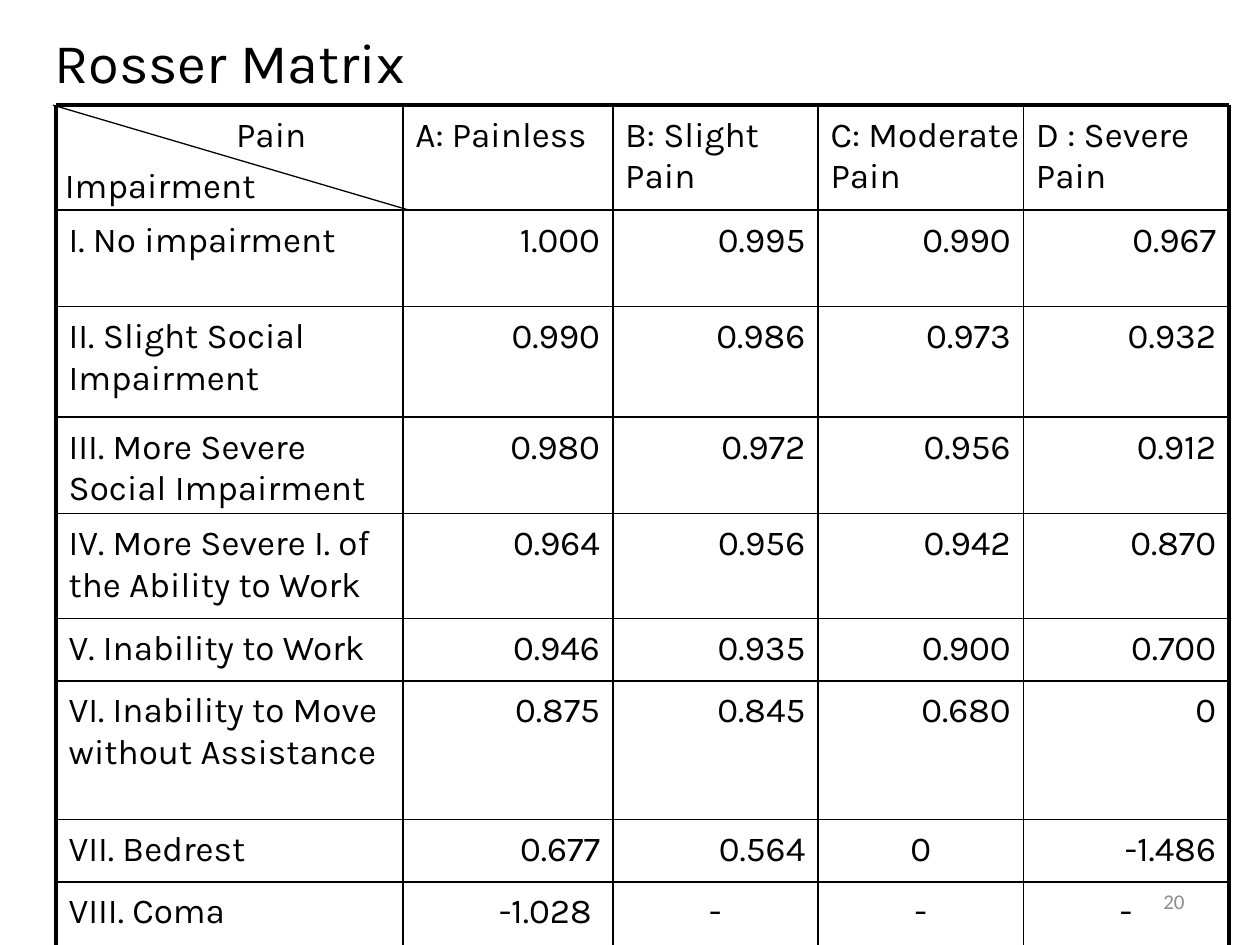
from itertools import accumulate
from lxml import etree
from pptx import Presentation, util as u
from pptx.dml.color import RGBColor
from pptx.enum import shapes as s, text as t
from pptx.oxml import ns

Cm, Pt = u.Cm, u.Pt
LEFT, CENTER, RIGHT = t.PP_ALIGN.LEFT, t.PP_ALIGN.CENTER, t.PP_ALIGN.RIGHT
BLACK, GREY = "000000", "8C8C8C"
TITLE = "Rosser Matrix"
ROWS = [
    ("Pain", "A: Painless", "B: Slight Pain", "C: Moderate Pain", "D : Severe\vPain"),
    ("I. No impairment", "1.000", "0.995", "0.990", "0.967"),
    ("II. Slight Social Impairment", "0.990", "0.986", "0.973", "0.932"),
    ("III. More Severe Social Impairment", "0.980", "0.972", "0.956", "0.912"),
    ("IV. More Severe I. of the Ability to Work", "0.964", "0.956", "0.942", "0.870"),
    ("V. Inability to Work", "0.946", "0.935", "0.900", "0.700"),
    ("VI. Inability to Move without Assistance", "0.875", "0.845", "0.680", "0"),
    ("VII. Bedrest", "0.677", "0.564", "0", "-1.486"),
    ("VIII. Coma", "-1.028 ", "-", "-", "-"),
]
WIDTHS = [6.99, 4.23, 4.14, 4.14, 4.14]
HEIGHTS = [2.12, 1.94, 2.23, 1.94, 2.12, 1.26, 2.79, 1.26, 1.26]
X, Y = 1.13, 2.12
CENTRED = {(7, 3), (8, 2), (8, 3), (8, 4)}


def style(frame, size=20, align=LEFT, name="Karla", color=BLACK, pitch=None):
    """Format every paragraph of a text frame."""
    for par in frame.paragraphs:
        par.alignment, par.line_spacing = align, pitch
        par.font.size, par.font.name = Pt(size), name
        par.font.color.rgb = RGBColor.from_string(color)


def label(slide, words, box, anchor=t.MSO_ANCHOR.TOP, **look):
    """Add a wrapped text box."""
    frame = slide.shapes.add_textbox(*map(Cm, box)).text_frame
    frame.word_wrap, frame.vertical_anchor = True, anchor
    frame.text = words
    style(frame, **look)


def rule(slide, ends, width):
    """Draw a black line without shadow."""
    line = slide.shapes.add_connector(s.MSO_CONNECTOR.STRAIGHT, *map(Cm, ends))
    line.line.width = Pt(width)
    line.line.color.rgb = RGBColor.from_string(BLACK)
    etree.SubElement(line._element.spPr, ns.qn("a:effectLst"))


def matrix(slide):
    """Build the table of values."""
    box = map(Cm, (X, Y, sum(WIDTHS), sum(HEIGHTS)))
    table = slide.shapes.add_table(len(ROWS), len(WIDTHS), *box).table
    table.first_row = table.horz_banding = False
    for col, width in zip(table.columns, WIDTHS):
        col.width = Cm(width)
    for r, (row, height) in enumerate(zip(ROWS, HEIGHTS)):
        table.rows[r].height = Cm(height)
        for c, words in enumerate(row):
            cell = table.cell(r, c)
            cell.margin_top, cell.margin_bottom = Cm(0.18), 0
            cell.text = words
            align = CENTER if (r, c) in CENTRED else RIGHT if r and c else LEFT
            style(cell.text_frame, align=align, pitch=1.02)
            cell.fill.background()
    table.cell(0, 0).margin_left = Cm(3.63)
    table.cell(0, 3).margin_right = 0


def grid(slide):
    """Rule the matrix, with a heavy frame open at the foot."""
    xs = list(accumulate(WIDTHS, initial=X))
    ys = list(accumulate(HEIGHTS, initial=Y))
    for y in ys[:-1]:
        rule(slide, (xs[0], y, xs[-1], y), 2.25 if y == Y else 1)
    for x in xs:
        rule(slide, (x, Y, x, ys[-1]), 2.25 if x in (xs[0], xs[-1]) else 1)
    rule(slide, (1.07, Y, 8.26, ys[1]), 0.75)


def main():
    """Build and save the slide."""
    deck = Presentation()
    deck.slide_width, deck.slide_height = Cm(25.4), Cm(19.05)
    slide = deck.slides.add_slide(deck.slide_layouts[5])
    head = slide.shapes.title
    head.left, head.top, head.width, head.height = map(Cm, (0.84, 0.43, 8.69, 1.6))
    frame = head.text_frame
    frame.text = TITLE
    frame.auto_size, frame.vertical_anchor = t.MSO_AUTO_SIZE.NONE, t.MSO_ANCHOR.TOP
    style(frame, size=32)
    matrix(slide)
    grid(slide)
    label(slide, "Impairment", (1.06, 3.18, 6.15, 1.09))
    label(slide, "20", (18.2, 17.65, 5.93, 1.02), t.MSO_ANCHOR.MIDDLE,
          size=12, align=RIGHT, name="Calibri", color=GREY)
    deck.save("out.pptx")


if __name__ == "__main__":
    main()
